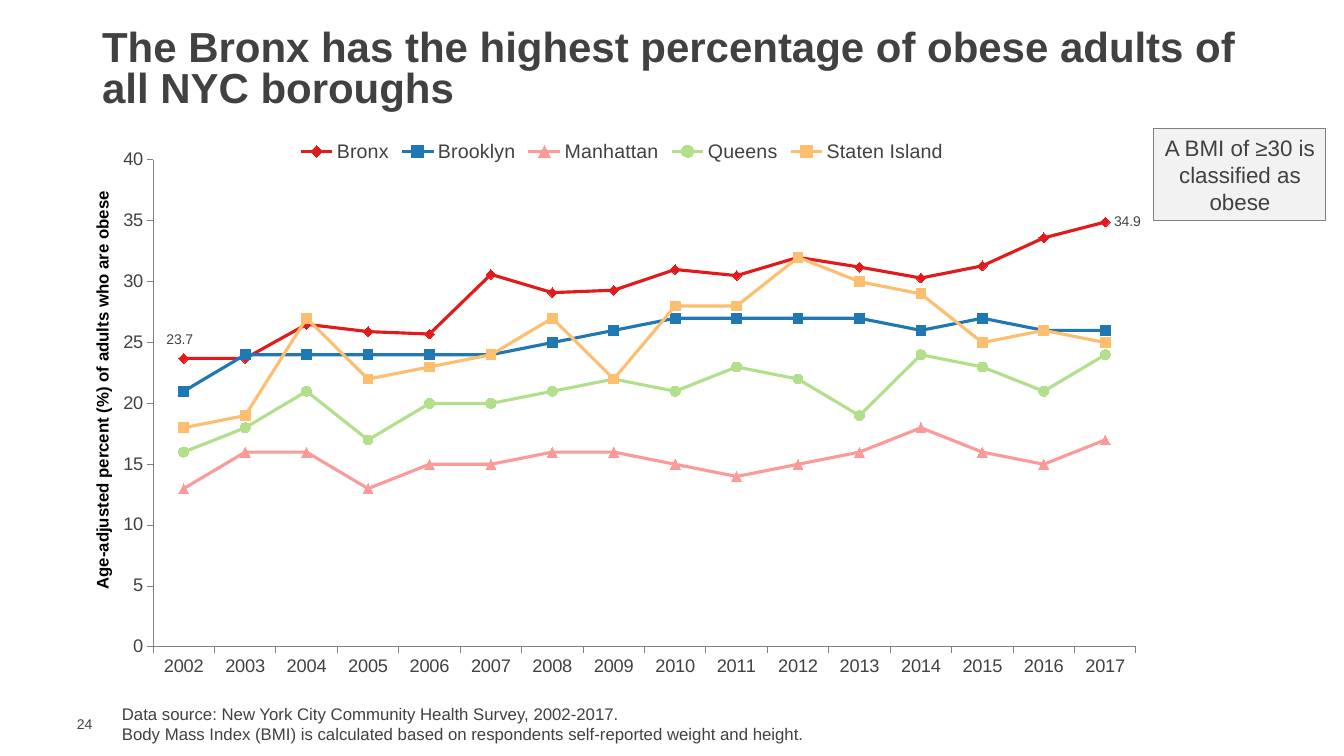
from dataclasses import dataclass

from lxml import etree
from pptx import Presentation
from pptx.chart.data import CategoryChartData
from pptx.dml.color import RGBColor
from pptx.enum.chart import (XL_CHART_TYPE, XL_LABEL_POSITION as LabelPos,
                             XL_LEGEND_POSITION, XL_MARKER_STYLE as Marker,
                             XL_TICK_MARK)
from pptx.enum.shapes import MSO_SHAPE
from pptx.enum.text import MSO_ANCHOR as Anchor, PP_ALIGN as Align
from pptx.oxml.ns import qn
from pptx.util import Emu, Pt

EMU_PER_PX = 914400 / 100.8


@dataclass(frozen=True)
class Theme:
    font: str = "Arial"
    ink: str = "414042"
    black: str = "000000"
    panel: str = "F2F2F2"
    border: str = "808080"
    title: int = 30
    callout: int = 16
    legend: int = 14
    ticks: int = 13
    note: int = 12
    small: int = 10


THEME = Theme()

CHART_WIDTH, CHART_HEIGHT = 1066, 570
YEARS = range(2002, 2018)
# borough: colour, marker, yearly percentages
BOROUGHS = {
    "Bronx": ("E31A1C", Marker.DIAMOND,
              (23.7, 23.7, 26.5, 25.9, 25.7, 30.6, 29.1, 29.3,
               31, 30.5, 32, 31.2, 30.3, 31.3, 33.6, 34.9)),
    "Brooklyn": ("1F78B4", Marker.SQUARE,
                 (21, 24, 24, 24, 24, 24, 25, 26,
                  27, 27, 27, 27, 26, 27, 26, 26)),
    "Manhattan": ("FB9A99", Marker.TRIANGLE,
                  (13, 16, 16, 13, 15, 15, 16, 16,
                   15, 14, 15, 16, 18, 16, 15, 17)),
    "Queens": ("B2DF8A", Marker.CIRCLE,
               (16, 18, 21, 17, 20, 20, 21, 22,
                21, 23, 22, 19, 24, 23, 21, 24)),
    "Staten Island": ("FDBF6F", Marker.SQUARE,
                      (18, 19, 27, 22, 23, 24, 27, 22,
                       28, 28, 32, 30, 29, 25, 26, 25)),
}


def px(length):
    return Emu(round(length * EMU_PER_PX))


def box(left, top, width, height):
    return px(left), px(top), px(width), px(height)


def style_font(font, size, color=THEME.ink, bold=False):
    font.name = THEME.font
    font.size = Pt(size)
    font.bold = bold
    font.color.rgb = RGBColor.from_string(color)


def write(frame, text, size, color=THEME.ink, bold=False, align=Align.LEFT,
          anchor=Anchor.TOP, spacing=None):
    """Fill a text frame, one paragraph for each line of text."""
    frame.word_wrap = True
    frame.vertical_anchor = anchor
    frame.text = text
    for paragraph in frame.paragraphs:
        paragraph.alignment = align
        paragraph.line_spacing = spacing
        for run in paragraph.runs:
            style_font(run.font, size, color, bold)


def add_title(slide, text):
    title = slide.shapes.title
    title.left, title.top, title.width, title.height = box(92, 25, 1176, 92)
    write(title.text_frame, text, THEME.title, bold=True,
          anchor=Anchor.MIDDLE, spacing=0.8)


def add_note(slide, place, text, size, **format_options):
    frame = slide.shapes.add_textbox(*box(*place)).text_frame
    write(frame, text, size, **format_options)
    return frame


def add_callout(slide, place, text):
    callout = slide.shapes.add_shape(MSO_SHAPE.RECTANGLE, *box(*place))
    callout.shadow.inherit = False
    callout.fill.solid()
    callout.fill.fore_color.rgb = RGBColor.from_string(THEME.panel)
    callout.line.color.rgb = RGBColor.from_string(THEME.border)
    callout.line.width = Pt(0.75)
    write(callout.text_frame, text, THEME.callout, align=Align.CENTER)


def set_layout(parent, index, left, top, size=None, from_edge=True):
    """Place a chart part, in px of the chart, by a layout child at index."""
    for old in parent.findall(qn("c:layout")):
        parent.remove(old)
    settings = {"layoutTarget": "inner"} if size else {}
    if from_edge:
        settings.update(xMode="edge", yMode="edge")
    settings.update(x=left / CHART_WIDTH, y=top / CHART_HEIGHT)
    if size:
        settings.update(w=size[0] / CHART_WIDTH, h=size[1] / CHART_HEIGHT)
    layout = etree.Element(qn("c:layout"))
    manual = etree.SubElement(layout, qn("c:manualLayout"))
    for tag, value in settings.items():
        etree.SubElement(manual, qn(f"c:{tag}")).set("val", str(value))
    parent.insert(index, layout)


def style_axis(axis):
    axis.has_major_gridlines = False
    axis.major_tick_mark = XL_TICK_MARK.OUTSIDE
    axis.minor_tick_mark = XL_TICK_MARK.NONE
    axis.format.line.color.rgb = RGBColor.from_string(THEME.border)
    axis.format.line.width = Pt(0.75)
    style_font(axis.tick_labels.font, THEME.ticks)


def style_series(series, color, marker):
    rgb = RGBColor.from_string(color)
    series.smooth = False
    series.format.line.color.rgb = rgb
    series.format.line.width = Pt(2.25)
    series.marker.style = marker
    series.marker.size = 7
    series.marker.format.fill.solid()
    series.marker.format.fill.fore_color.rgb = rgb
    series.marker.format.line.color.rgb = rgb


def label_point(series, index, position):
    label = series.points[index].data_label
    style_font(label.font, THEME.small)
    label.position = position


def add_borough_chart(slide, left, top):
    data = CategoryChartData()
    data.categories = [str(year) for year in YEARS]
    for borough, (_, _, percentages) in BOROUGHS.items():
        data.add_series(borough, percentages)
    chart = slide.shapes.add_chart(
        XL_CHART_TYPE.LINE_MARKERS,
        *box(left, top, CHART_WIDTH, CHART_HEIGHT), data).chart
    chart.has_title = False
    style_font(chart.font, THEME.ticks)

    chart.has_legend = True
    chart.legend.position = XL_LEGEND_POSITION.TOP
    chart.legend.include_in_layout = False
    style_font(chart.legend.font, THEME.legend)

    percent_axis = chart.value_axis
    for axis in (chart.category_axis, percent_axis):
        style_axis(axis)
    percent_axis.minimum_scale = 0
    percent_axis.maximum_scale = 40
    percent_axis.major_unit = 5
    axis_title = percent_axis.axis_title
    write(axis_title.text_frame,
          "Age-adjusted percent (%) of adults who are obese", THEME.note,
          color=THEME.black, bold=True, align=Align.CENTER)

    plot = chart.plots[0]
    plot.vary_by_categories = False
    for series in plot.series:
        color, marker, _ = BOROUGHS[series.name]
        style_series(series, color, marker)
    bronx = plot.series[0]
    label_point(bronx, 0, LabelPos.ABOVE)
    label_point(bronx, len(YEARS) - 1, LabelPos.RIGHT)
    first_label = bronx._element.find(".//" + qn("c:dLbl"))
    set_layout(first_label, 1, -4, -2, from_edge=False)

    set_layout(axis_title._element, 1, 0, 59)
    set_layout(chart._chartSpace.chart.plotArea, 0, 64, 31, size=(983, 487))


def main():
    deck = Presentation()
    deck.slide_width, deck.slide_height = px(1344), px(756)
    slide = deck.slides.add_slide(deck.slide_layouts[5])

    add_title(slide, "The Bronx has the highest percentage of obese adults "
                     "of all NYC boroughs")
    add_borough_chart(slide, 89, 129)
    add_callout(slide, (1154, 129, 172, 92),
                "A BMI of ≥30 is classified as obese")
    add_note(slide, (112, 699, 979, 50),
             "Data source: New York City Community Health Survey, 2002-2017.\n"
             "Body Mass Index (BMI) is calculated based on respondents "
             "self-reported weight and height.", THEME.note)
    page_number = add_note(slide, (67, 715, 43, 17), "24", THEME.small,
                           anchor=Anchor.MIDDLE)
    page_number.margin_left = px(10)
    page_number.margin_top = page_number.margin_right = 0
    page_number.margin_bottom = 0

    deck.save("out.pptx")


if __name__ == "__main__":
    main()
